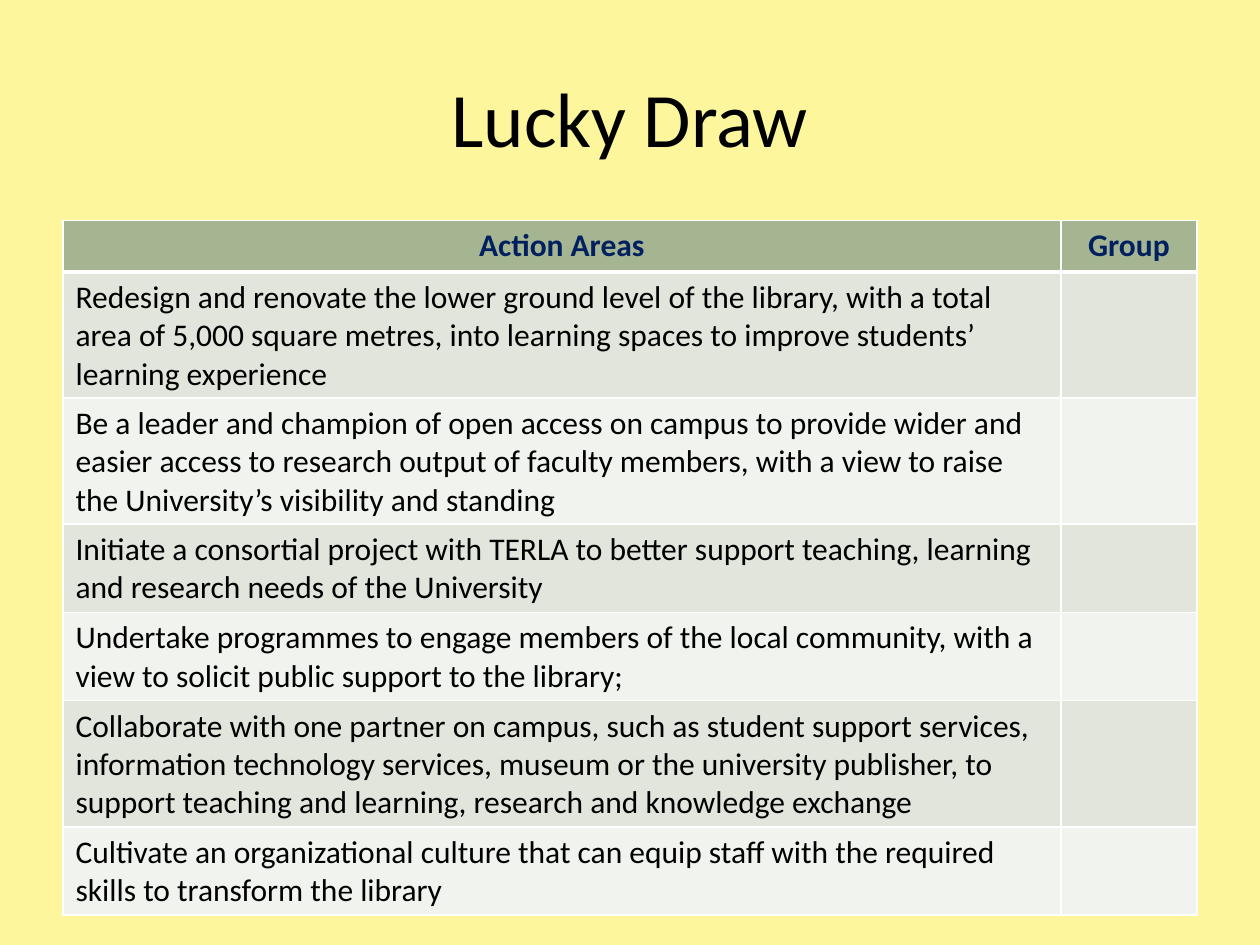
from lxml import etree
from pptx import Presentation
from pptx.dml.color import RGBColor
from pptx.enum import text
from pptx.oxml.ns import qn
from pptx.util import Inches, Pt

BACKGROUND = RGBColor(0xFD, 0xF6, 0x9C)
HEADER_FILL = RGBColor(0xA5, 0xB5, 0x92)
BAND_FILLS = [RGBColor(0xF0, 0xF3, 0xEE), RGBColor(0xE1, 0xE5, 0xDC)]
NAVY = RGBColor(0x00, 0x20, 0x60)
BLACK = RGBColor(0x00, 0x00, 0x00)
WHITE = RGBColor(0xFF, 0xFF, 0xFF)

ROWS = [
    ("Action Areas", "Group"),
    ("Redesign and renovate the lower ground level of the library, with a total area of "
     "5,000 square metres, into learning spaces to improve students’ learning experience", ""),
    ("Be a leader and champion of open access on campus to provide wider and easier access "
     "to research output of faculty members, with a view to raise the University’s "
     "visibility and standing", ""),
    ("Initiate a consortial project with TERLA to better support teaching, learning and "
     "research needs of the University", ""),
    ("Undertake programmes to engage members of the local community, with a view to solicit "
     "public support to the library;", ""),
    ("Collaborate with one partner on campus, such as student support services, information "
     "technology services, museum or the university publisher, to support teaching and "
     "learning, research and knowledge exchange", ""),
    ("Cultivate an organizational culture that can equip staff with the required skills to "
     "transform the library", ""),
]


def style_text(paragraph, size, color, bold=False, centered=False):
    if centered:
        paragraph.alignment = text.PP_ALIGN.CENTER
    for run in paragraph.runs:
        run.font.name = "Calibri"
        run.font.size = Pt(size)
        run.font.bold = bold
        run.font.color.rgb = color


def add_border(cell, side, width):
    properties = cell._tc.get_or_add_tcPr()
    line = etree.SubElement(properties, qn(f"a:ln{side}"), w=str(Pt(width)))
    fill = etree.SubElement(line, qn("a:solidFill"))
    etree.SubElement(fill, qn("a:srgbClr"), val=str(WHITE))


presentation = Presentation()
presentation.slide_width = Inches(10)
presentation.slide_height = Inches(7.5)
slide = presentation.slides.add_slide(presentation.slide_layouts[6])
slide.background.fill.solid()
slide.background.fill.fore_color.rgb = BACKGROUND

title = slide.shapes.add_textbox(Inches(0.5), Inches(0.3), Inches(9), Inches(1.25))
title.text_frame.word_wrap = True
title.text_frame.vertical_anchor = text.MSO_ANCHOR.MIDDLE
title.text_frame.text = "Lucky Draw"
style_text(title.text_frame.paragraphs[0], 44, BLACK, centered=True)

table_shape = slide.shapes.add_table(
    len(ROWS), 2, Inches(0.5), Inches(1.75), Inches(9), Inches(5.51))
table = table_shape.table
table.columns[0].width = Inches(7.92)
table.columns[1].width = Inches(1.08)

for row_index, row in enumerate(ROWS):
    table.rows[row_index].height = Inches(0.41)
    is_header = row_index == 0
    for column_index, wording in enumerate(row):
        cell = table.cell(row_index, column_index)
        for side in "LRTB":
            below_header = (is_header and side == "B") or (row_index == 1 and side == "T")
            add_border(cell, side, 3 if below_header else 1)
        cell.fill.solid()
        cell.fill.fore_color.rgb = HEADER_FILL if is_header else BAND_FILLS[row_index % 2]
        if wording:
            cell.text_frame.text = wording
            style_text(cell.text_frame.paragraphs[0], 18, NAVY if is_header else BLACK,
                       bold=is_header, centered=is_header)

presentation.save("out.pptx")
